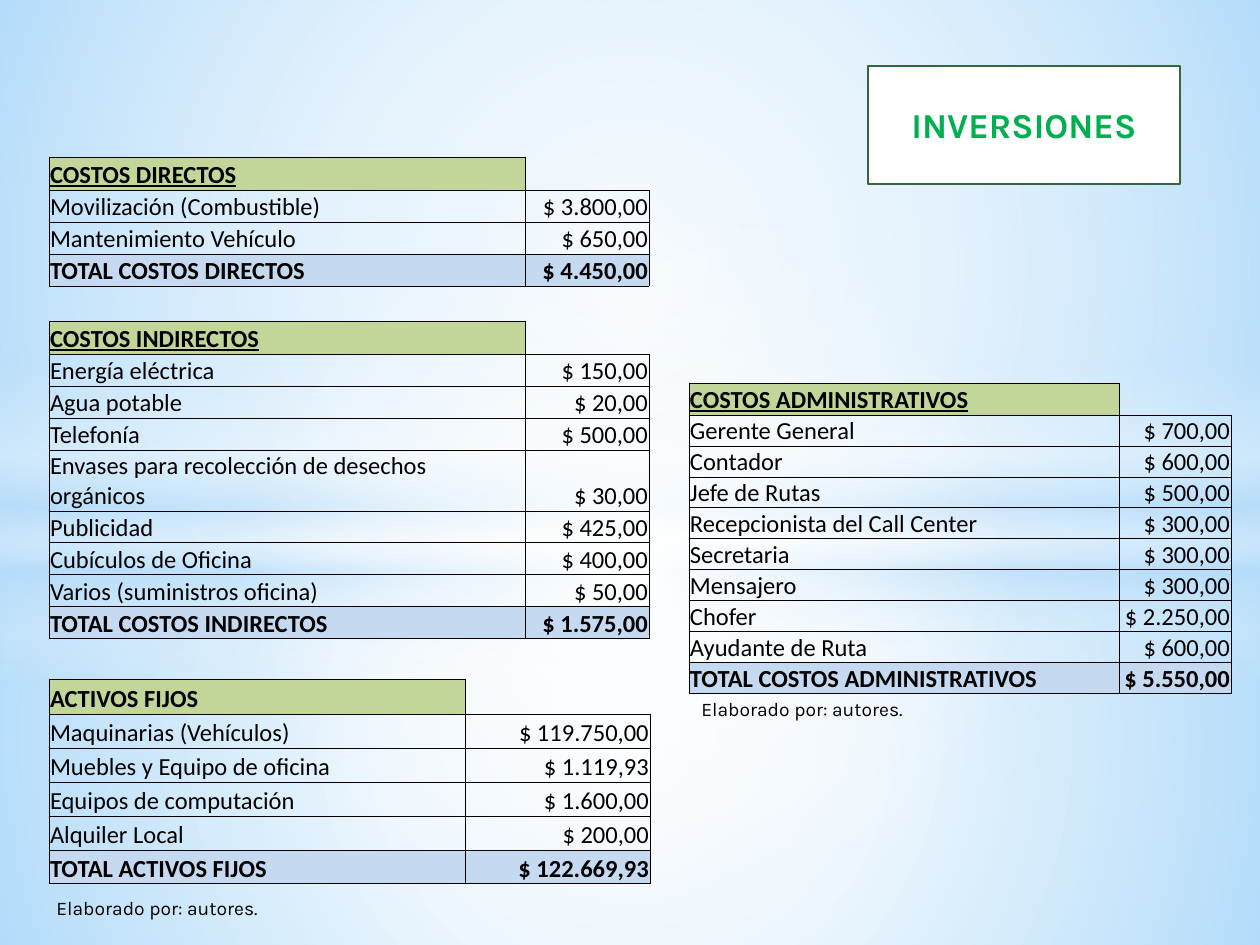
from lxml import etree
from pptx import Presentation
from pptx.dml.color import RGBColor
from pptx.enum.shapes import MSO_SHAPE as SHAPE
from pptx.enum.text import MSO_ANCHOR as ANCHOR, PP_ALIGN as ALIGN
from pptx.oxml import parse_xml
from pptx.oxml.ns import nsdecls, qn
from pptx.util import Pt

PX = 914400 // 126
WHITE = RGBColor(0xFF, 0xFF, 0xFF)
BLACK = RGBColor(0, 0, 0)
SKY = RGBColor(0xB4, 0xDC, 0xFA)
HEADER = RGBColor(0xC2, 0xD6, 0x9A)
TOTAL = RGBColor(0xC5, 0xD9, 0xF1)
GREEN = RGBColor(0x00, 0xB0, 0x50)
DARK_GREEN = RGBColor(0x37, 0x65, 0x40)

CIRCLE = ('<a:path path="circle"><a:fillToRect l="50000" t="50000" '
          'r="50000" b="50000"/></a:path>')
DOWN = '<a:lin ang="5400000" scaled="0"/>'


def set_gradient(shape, stops, direction):
    """Fill with (position %, colour, opacity %) stops."""
    marks = "".join(
        f'<a:gs pos="{pos * 1000}"><a:srgbClr val="{color}">'
        f'<a:alpha val="{alpha * 1000}"/></a:srgbClr></a:gs>'
        for pos, color, alpha in stops)
    shape._element.spPr.find(qn("a:prstGeom")).addnext(parse_xml(
        f'<a:gradFill rotWithShape="1" {nsdecls("a")}>'
        f'<a:gsLst>{marks}</a:gsLst>{direction}</a:gradFill>'))


def set_borders(cell, sides):
    """Draw the sides named by letters of LRTB and clear the others."""
    tcPr = cell._tc.get_or_add_tcPr()
    for side in "LRTB":
        ln = etree.SubElement(tcPr, qn(f"a:ln{side}"), w=str(Pt(0.5)))
        if side in sides:
            fill = etree.SubElement(ln, qn("a:solidFill"))
            etree.SubElement(fill, qn("a:srgbClr"), val=str(BLACK))
        else:
            etree.SubElement(ln, qn("a:noFill"))


prs = Presentation()
prs.slide_width, prs.slide_height = 1260 * PX, 945 * PX
s = prs.slides.add_slide(prs.slide_layouts[6])
s.background.fill.solid()
s.background.fill.fore_color.rgb = SKY

# Background glow
glows = [
    (SHAPE.RECTANGLE, 0, 533, 1260, 412, CIRCLE,
     [(0, WHITE, 91), (37, WHITE, 76), (100, SKY, 79)]),
    (SHAPE.RECTANGLE, 0, 0, 1260, 533, CIRCLE,
     [(0, WHITE, 89), (48, WHITE, 62), (100, SKY, 79)]),
    (SHAPE.RECTANGLE, 0, 365, 1260, 315, DOWN,
     [(0, WHITE, 0), (29, WHITE, 30), (45, SKY, 40),
      (55, WHITE, 26), (65, SKY, 60), (100, WHITE, 0)]),
    (SHAPE.OVAL, 0, 221, 1260, 703, CIRCLE,
     [(0, WHITE, 100), (54, WHITE, 0)]),
]
for kind, x, y, w, h, direction, stops in glows:
    sp = s.shapes.add_shape(kind, x * PX, y * PX, w * PX, h * PX)
    sp.shadow.inherit = False
    sp.line.fill.background()
    set_gradient(sp, stops, direction)

# Cost tables: a row without amount is a header, an empty row is a gap
direct_and_indirect = [
    ("COSTOS DIRECTOS", ""),
    ("Movilización (Combustible)", "$ 3.800,00"),
    ("Mantenimiento Vehículo", "$ 650,00"),
    ("TOTAL COSTOS DIRECTOS", "$ 4.450,00"),
    ("", ""),
    ("COSTOS INDIRECTOS", ""),
    ("Energía eléctrica", "$ 150,00"),
    ("Agua potable", "$ 20,00"),
    ("Telefonía", "$ 500,00"),
    ("Envases para recolección de desechos orgánicos", "$ 30,00"),
    ("Publicidad", "$ 425,00"),
    ("Cubículos de Oficina", "$ 400,00"),
    ("Varios (suministros oficina)", "$ 50,00"),
    ("TOTAL COSTOS INDIRECTOS", "$ 1.575,00"),
]
administrative = [
    ("COSTOS ADMINISTRATIVOS", ""),
    ("Gerente General", "$ 700,00"),
    ("Contador", "$ 600,00"),
    ("Jefe de Rutas", "$ 500,00"),
    ("Recepcionista del Call Center", "$ 300,00"),
    ("Secretaria", "$ 300,00"),
    ("Mensajero", "$ 300,00"),
    ("Chofer", "$ 2.250,00"),
    ("Ayudante de Ruta", "$ 600,00"),
    ("TOTAL COSTOS ADMINISTRATIVOS", "$ 5.550,00"),
]
fixed_assets = [
    ("ACTIVOS FIJOS", ""),
    ("Maquinarias (Vehículos)", "$ 119.750,00"),
    ("Muebles y Equipo de oficina", "$ 1.119,93"),
    ("Equipos de computación", "$ 1.600,00"),
    ("Alquiler Local", "$ 200,00"),
    ("TOTAL ACTIVOS FIJOS", "$ 122.669,93"),
]
tables = [
    (49, 157, (476, 124), 32, {4: 35, 9: 61}, True, direct_and_indirect),
    (689, 383, (430, 112), 31, {}, True, administrative),
    (49, 679, (416, 185), 34, {}, False, fixed_assets),
]
for x, y, widths, row_h, tall_rows, underlined, rows in tables:
    heights = [tall_rows.get(i, row_h if amount else row_h + 1)
               for i, (_, amount) in enumerate(rows)]
    table = s.shapes.add_table(len(rows), 2, x * PX, y * PX,
                               sum(widths) * PX, sum(heights) * PX).table
    table.first_row = table.horz_banding = False
    for column, width in zip(table.columns, widths):
        column.width = width * PX
    for i, (row, height) in enumerate(zip(rows, heights)):
        table.rows[i].height = height * PX
        is_header = bool(row[0]) and not row[1]
        is_total = row[0].startswith("TOTAL")
        for j, text in enumerate(row):
            cell = table.cell(i, j)
            if text:
                sides = "LRTB"
            elif is_header:
                sides = "LB"
            else:
                sides = "T" if j else "TB"
            set_borders(cell, sides)
            if text and (is_header or is_total):
                cell.fill.solid()
                cell.fill.fore_color.rgb = HEADER if is_header else TOTAL
            else:
                cell.fill.background()
            cell.margin_left = cell.margin_right = cell.margin_top = PX
            cell.margin_bottom = 0
            cell.vertical_anchor = ANCHOR.BOTTOM
            p = cell.text_frame.paragraphs[0]
            p.text = text
            p.alignment = ALIGN.RIGHT if j else ALIGN.LEFT
            p.font.name, p.font.size = "Calibri", Pt(14)
            p.font.color.rgb = BLACK
            p.font.bold = is_header or is_total
            p.font.underline = is_header and underlined

# Title
sp = s.shapes.add_shape(SHAPE.RECTANGLE, 868 * PX, 66 * PX, 312 * PX, 118 * PX)
sp.shadow.inherit = False
sp.fill.solid()
sp.fill.fore_color.rgb = WHITE
sp.line.color.rgb = DARK_GREEN
sp.line.width = Pt(1.25)
tf = sp.text_frame
tf.vertical_anchor = ANCHOR.MIDDLE
p = tf.paragraphs[0]
p.text = "INVERSIONES"
p.alignment = ALIGN.CENTER
p.font.name, p.font.size, p.font.bold = "Karla", Pt(20), True
p.font.color.rgb = GREEN

# Credits under the tables
for x, y in [(44, 890), (689, 691)]:
    tf = s.shapes.add_textbox(x * PX, y * PX, 238 * PX, 36 * PX).text_frame
    tf.word_wrap = True
    p = tf.paragraphs[0]
    p.text = "Elaborado por: autores."
    p.font.name, p.font.size = "Karla", Pt(11)
    p.font.color.rgb = BLACK

prs.save("out.pptx")
